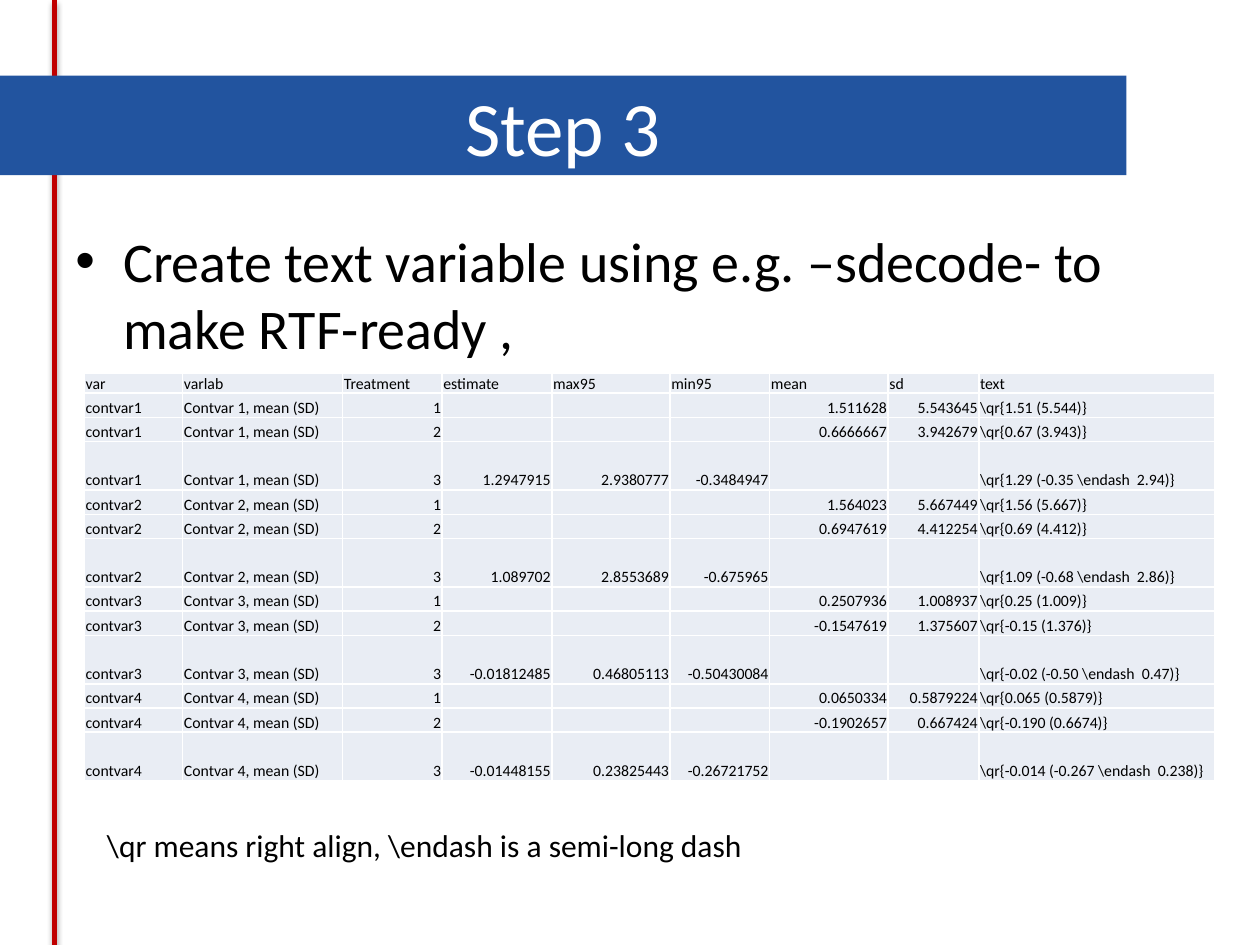
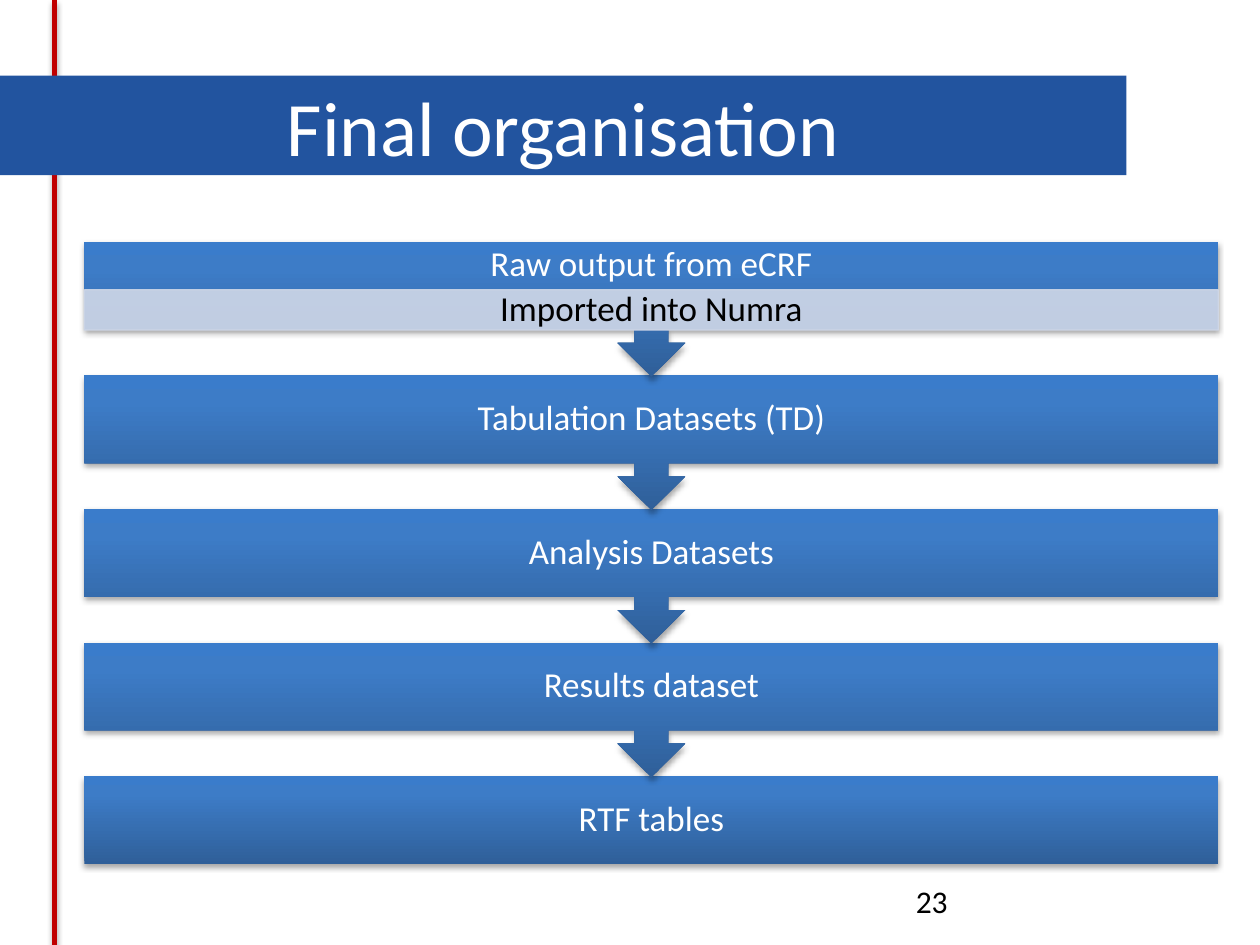
from lxml.etree import SubElement
from pptx import Presentation
from pptx.dml.color import RGBColor
from pptx.enum.shapes import MSO_CONNECTOR, MSO_SHAPE
from pptx.enum.text import MSO_ANCHOR, PP_ALIGN
from pptx.oxml.ns import qn
from pptx.util import Inches, Pt

# Content
STEP_TITLE = "Step 3"
STEP_BULLET = "Create text variable using e.g. –sdecode- to make RTF-ready ,"
STEP_NOTE = r"\qr means right align, \endash is a semi-long dash"
HEADERS = ["var", "varlab", "Treatment", "estimate", "max95", "min95", "mean", "sd", "text"]
COL_WIDTHS = [0.78, 1.27, 0.79, 0.87, 0.94, 0.79, 0.94, 0.72, 1.87]
NUMERIC_COLS = range(2, 8)
# Per variable: estimate, max95, min95, mean, sd, text for treatments 1 to 3
RESULTS = [
    [("", "", "", "1.511628", "5.543645", r"\qr{1.51 (5.544)}"),
     ("", "", "", "0.6666667", "3.942679", r"\qr{0.67 (3.943)}"),
     ("1.2947915", "2.9380777", "-0.3484947", "", "", r"\qr{1.29 (-0.35 \endash  2.94)}")],
    [("", "", "", "1.564023", "5.667449", r"\qr{1.56 (5.667)}"),
     ("", "", "", "0.6947619", "4.412254", r"\qr{0.69 (4.412)}"),
     ("1.089702", "2.8553689", "-0.675965", "", "", r"\qr{1.09 (-0.68 \endash  2.86)}")],
    [("", "", "", "0.2507936", "1.008937", r"\qr{0.25 (1.009)}"),
     ("", "", "", "-0.1547619", "1.375607", r"\qr{-0.15 (1.376)}"),
     ("-0.01812485", "0.46805113", "-0.50430084", "", "", r"\qr{-0.02 (-0.50 \endash  0.47)}")],
    [("", "", "", "0.0650334", "0.5879224", r"\qr{0.065 (0.5879)}"),
     ("", "", "", "-0.1902657", "0.667424", r"\qr{-0.190 (0.6674)}"),
     ("-0.01448155", "0.23825443", "-0.26721752", "", "", r"\qr{-0.014 (-0.267 \endash  0.238)}")],
]
FLOW_TITLE = "Final organisation"
STAGES = ["Raw output from eCRF", "Tabulation Datasets (TD)", "Analysis Datasets",
          "Results dataset", "RTF tables"]
IMPORT_NOTE = "Imported into Numra"
PAGE_NUMBER = "23"

# Style
FONT = "Calibri"
BLACK = RGBColor(0x00, 0x00, 0x00)
WHITE = RGBColor(0xFF, 0xFF, 0xFF)
RED = RGBColor(0xC0, 0x00, 0x00)
BAND_BLUE = RGBColor(0x22, 0x54, 0x9F)
CELL_GREY = RGBColor(0xE9, 0xED, 0xF4)
STRIP_GREY = RGBColor(0xD0, 0xD8, 0xE8)
STAGE_GRADIENT = [(0, RGBColor(0x2F, 0x5F, 0x99)), (80, RGBColor(0x3D, 0x7C, 0xC7)),
                  (100, RGBColor(0x3A, 0x7C, 0xCB))]

# Layout, in inches
SLIDE_W, SLIDE_H = 10, 7.5
RULE_X = 0.43
LEFT = 0.67
TABLE_TOP, TABLE_H, HEADER_H = 2.96, 3.23, 0.15
FLOW_TOP, FLOW_W, STAGE_PITCH = 1.92, 9, 1.06
BOX_H, CALLOUT_H, STRIP_H = 0.7, 1.07, 0.32


def add_run(p, text, size, color):
    r = p.add_run()
    r.text = text
    r.font.name, r.font.size, r.font.color.rgb = FONT, Pt(size), color


def set_insets(obj, left, top, right, bottom):
    """Works for a text frame and for a table cell."""
    obj.margin_left, obj.margin_top = Inches(left), Inches(top)
    obj.margin_right, obj.margin_bottom = Inches(right), Inches(bottom)


def add_textbox(s, x, y, w, h, text, size):
    tf = s.shapes.add_textbox(*map(Inches, (x, y, w, h))).text_frame
    tf.word_wrap = True
    add_run(tf.paragraphs[0], text, size, BLACK)
    return tf


def add_block(s, kind, x, y, w, h, text, size, color, spacing=1.0):
    """Preset shape without outline or shadow, its text in the middle."""
    sp = s.shapes.add_shape(kind, *map(Inches, (x, y, w, h)))
    sp.shadow.inherit = False
    sp.line.fill.background()
    tf = sp.text_frame
    tf.word_wrap = True
    tf.vertical_anchor = MSO_ANCHOR.MIDDLE
    p = tf.paragraphs[0]
    p.alignment = PP_ALIGN.CENTER
    p.line_spacing = spacing
    add_run(p, text, size, color)
    return sp


def add_shadow(sp):
    props = sp._element.spPr
    effects = props.find(qn("a:effectLst"))
    if effects is None:
        effects = SubElement(props, qn("a:effectLst"))
    shadow = SubElement(effects, qn("a:outerShdw"), blurRad=str(Pt(3.1)), dist=str(Pt(1.8)),
                        dir="5400000", rotWithShape="0")
    clr = SubElement(shadow, qn("a:srgbClr"), val=str(BLACK))
    SubElement(clr, qn("a:alpha"), val="35000")


def fill_gradient(sp, stops):
    """Linear gradient running from the bottom edge to the top edge."""
    sp.fill.gradient()
    grad = sp._element.spPr.find(qn("a:gradFill"))
    for child in list(grad):
        grad.remove(child)
    stop_list = SubElement(grad, qn("a:gsLst"))
    for percent, color in stops:
        stop = SubElement(stop_list, qn("a:gs"), pos=str(percent * 1000))
        SubElement(stop, qn("a:srgbClr"), val=str(color))
    SubElement(grad, qn("a:lin"), ang="16200000", scaled="0")


def set_borders(cell, color, width):
    props = cell._tc.get_or_add_tcPr()
    for i, side in enumerate(("lnL", "lnR", "lnT", "lnB")):
        ln = SubElement(props, qn(f"a:{side}"), w=str(Pt(width)))
        props.remove(ln)
        props.insert(i, ln)
        SubElement(SubElement(ln, qn("a:solidFill")), qn("a:srgbClr"), val=str(color))


def add_titled_slide(prs, title):
    s = prs.slides.add_slide(prs.slide_layouts[6])
    rule = s.shapes.add_connector(MSO_CONNECTOR.STRAIGHT, Inches(RULE_X), 0,
                                  Inches(RULE_X), Inches(SLIDE_H))
    rule.line.color.rgb, rule.line.width = RED, Pt(3)
    add_shadow(rule)
    band = add_block(s, MSO_SHAPE.RECTANGLE, 0, 0.6, 8.94, 0.79, title, 44, WHITE)
    band.fill.solid()
    band.fill.fore_color.rgb = BAND_BLUE
    return s


def add_results_table(s):
    rows = [HEADERS] + [
        (f"contvar{v}", f"Contvar {v}, mean (SD)", str(t), *values)
        for v, treatments in enumerate(RESULTS, 1)
        for t, values in enumerate(treatments, 1)]
    # The third treatment of each variable takes a row of double height
    shares = [2 if row[2] == "3" else 1 for row in rows[1:]]
    unit = (TABLE_H - HEADER_H) / sum(shares)
    heights = [HEADER_H] + [unit * share for share in shares]

    table = s.shapes.add_table(len(rows), len(HEADERS), Inches(LEFT), Inches(TABLE_TOP),
                               Inches(sum(COL_WIDTHS)), Inches(TABLE_H)).table
    table.first_row = table.horz_banding = False
    for col, width in zip(table.columns, COL_WIDTHS):
        col.width = Inches(width)
    for i, (row, height) in enumerate(zip(rows, heights)):
        table.rows[i].height = Inches(height)
        for j, text in enumerate(row):
            cell = table.cell(i, j)
            cell.fill.solid()
            cell.fill.fore_color.rgb = CELL_GREY
            cell.vertical_anchor = MSO_ANCHOR.BOTTOM
            set_insets(cell, 0.01, 0.01, 0.01, 0)
            set_borders(cell, WHITE, 1)
            p = cell.text_frame.paragraphs[0]
            if i and j in NUMERIC_COLS:
                p.alignment = PP_ALIGN.RIGHT
            if text:
                add_run(p, text, 9, BLACK)
            else:
                SubElement(p._p, qn("a:endParaRPr"), sz="900")


def build_step(prs):
    s = add_titled_slide(prs, STEP_TITLE)
    p = add_textbox(s, 0.5, 1.75, 9, 1.2, STEP_BULLET, 32).paragraphs[0]
    props = p._p.get_or_add_pPr()
    props.set("marL", str(Inches(0.38)))
    props.set("indent", str(-Inches(0.38)))
    SubElement(props, qn("a:buFont"), typeface="Arial")
    SubElement(props, qn("a:buChar"), char="•")
    add_results_table(s)
    add_textbox(s, 0.75, 6.51, 6.54, 0.4, STEP_NOTE, 18)


def build_flow(prs):
    s = add_titled_slide(prs, FLOW_TITLE)
    add_textbox(s, 7.17, 6.95, 2.33, 0.4, PAGE_NUMBER, 18)
    last = len(STAGES) - 1
    # Bottom stage first, so that each arrow lies over the box it points to
    for i in range(last, -1, -1):
        kind, height = ((MSO_SHAPE.RECTANGLE, BOX_H) if i == last
                        else (MSO_SHAPE.DOWN_ARROW_CALLOUT, CALLOUT_H))
        sp = add_block(s, kind, LEFT, FLOW_TOP + i * STAGE_PITCH, FLOW_W, height,
                       STAGES[i], 20, WHITE, 0.9)
        fill_gradient(sp, STAGE_GRADIENT)
        add_shadow(sp)
        set_insets(sp.text_frame, 0.16, 0, 0.16, 0 if i else STRIP_H)

    strip = add_block(s, MSO_SHAPE.RECTANGLE, LEFT, FLOW_TOP + BOX_H - STRIP_H, FLOW_W,
                      STRIP_H, IMPORT_NOTE, 20, BLACK, 0.9)
    set_insets(strip.text_frame, 0.16, 0.03, 0.16, 0.03)
    strip.fill.solid()
    strip.fill.fore_color.rgb = strip.line.color.rgb = STRIP_GREY
    strip.line.width = Pt(0.75)
    for clr in strip._element.spPr.iter(qn("a:srgbClr")):
        SubElement(clr, qn("a:alpha"), val="90000")


def main():
    prs = Presentation()
    prs.slide_width, prs.slide_height = Inches(SLIDE_W), Inches(SLIDE_H)
    build_step(prs)
    build_flow(prs)
    prs.save("out.pptx")


if __name__ == "__main__":
    main()
